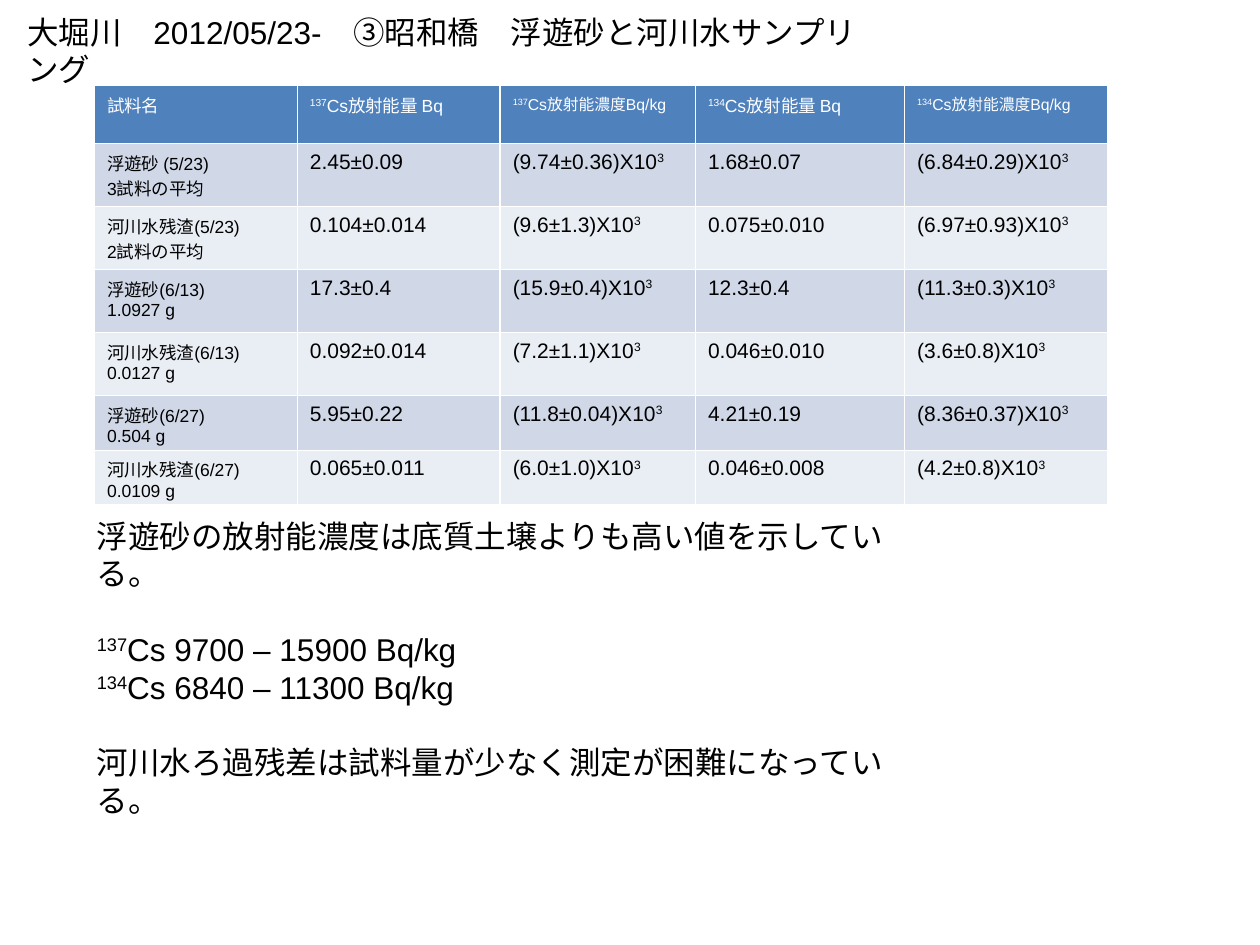
"""Build a slide of radioactive caesium measurements in a river."""
from itertools import chain

from pptx import Presentation
from pptx.dml.color import RGBColor
from pptx.util import Inches, Pt

BLACK = RGBColor(0x00, 0x00, 0x00)
WHITE = RGBColor(0xFF, 0xFF, 0xFF)
HEADER_BLUE = RGBColor(0x4F, 0x81, 0xBD)
BANDS = (RGBColor(0xD0, 0xD8, 0xE8), RGBColor(0xE9, 0xED, 0xF4))

FONT = "Arial"
SLIDE_WIDTH = Inches(10)
SLIDE_HEIGHT = Inches(7.5)
COLUMN_SHARES = (16.1, 16.1, 15.5, 16.6, 16.1)
ROW_SHARES = (6.13, 6.67, 6.67, 6.67, 6.67, 5.73, 5.73)

TITLE = "大堀川　2012/05/23-　③昭和橋　浮遊砂と河川水サンプリング"
FINDINGS = (
    ("浮遊砂の放射能濃度は底質土壌よりも高い値を示している。", 0),
    ("^137^Cs 9700 – 15900 Bq/kg", 21.5),
    ("^134^Cs 6840 – 11300 Bq/kg", 0),
    ("河川水ろ過残差は試料量が少なく測定が困難になっている。", 21.5),
)
HEADER = (
    ("試料名", 10),
    ("^137^Cs放射能量 Bq", 10),
    ("^137^Cs放射能濃度Bq/kg", 9),
    ("^134^Cs放射能量 Bq", 10),
    ("^134^Cs放射能濃度Bq/kg", 9),
)
SAMPLES = (
    (("浮遊砂 (5/23)", "3試料の平均"), "2.45±0.09", "9.74±0.36", "1.68±0.07", "6.84±0.29"),
    (("河川水残渣(5/23)", "2試料の平均"), "0.104±0.014", "9.6±1.3", "0.075±0.010", "6.97±0.93"),
    (("浮遊砂(6/13)", "1.0927 g"), "17.3±0.4", "15.9±0.4", "12.3±0.4", "11.3±0.3"),
    (("河川水残渣(6/13)", "0.0127 g"), "0.092±0.014", "7.2±1.1", "0.046±0.010", "3.6±0.8"),
    (("浮遊砂(6/27)", "0.504 g"), "5.95±0.22", "11.8±0.04", "4.21±0.19", "8.36±0.37"),
    (("河川水残渣(6/27)", "0.0109 g"), "0.065±0.011", "6.0±1.0", "0.046±0.008", "4.2±0.8"),
)


def across(percent):
    """Return a percentage of the slide width."""
    return round(SLIDE_WIDTH * percent / 100)


def down(percent):
    """Return a percentage of the slide height."""
    return round(SLIDE_HEIGHT * percent / 100)


def write_paragraph(paragraph, text, size, color):
    """Write text in which carets enclose superscripts."""
    for index, part in enumerate(text.split("^")):
        if not part:
            continue
        run = paragraph.add_run()
        run.text = part
        run.font.name = FONT
        run.font.size = Pt(size)
        run.font.bold = False
        run.font.color.rgb = color
        if index % 2:
            run.font._element.set("baseline", "30000")


def write_lines(text_frame, lines, size, color):
    """Write one paragraph for each line of a text frame."""
    for index, line in enumerate(lines):
        paragraph = text_frame.add_paragraph() if index else text_frame.paragraphs[0]
        write_paragraph(paragraph, line, size, color)


def add_text(slide, left, top, width, height, lines):
    """Add a wrapping text box with the given lines."""
    shape = slide.shapes.add_textbox(across(left), down(top), across(width), down(height))
    shape.text_frame.word_wrap = True
    write_lines(shape.text_frame, lines, 18, BLACK)
    return shape


def fill_cell(cell, lines, size, color, background):
    """Fill a table cell with colour and text."""
    cell.fill.solid()
    cell.fill.fore_color.rgb = background
    write_lines(cell.text_frame, lines, size, color)


def add_measurements(slide):
    """Add the table of activities and concentrations."""
    shape = slide.shapes.add_table(
        len(ROW_SHARES), len(COLUMN_SHARES), across(7.5), down(9.07),
        across(sum(COLUMN_SHARES)), down(sum(ROW_SHARES)))
    table = shape.table
    for column, share in zip(table.columns, COLUMN_SHARES):
        column.width = across(share)
    for row, share in zip(table.rows, ROW_SHARES):
        row.height = down(share)
    for cell, (label, size) in zip(table.rows[0].cells, HEADER):
        fill_cell(cell, [label], size, WHITE, HEADER_BLUE)
    for row_index, (sample, *values) in enumerate(SAMPLES):
        background = BANDS[row_index % 2]
        cells = table.rows[row_index + 1].cells
        pairs = zip(values[::2], values[1::2])
        entries = chain.from_iterable(
            (activity, f"({concentration})X10^3^") for activity, concentration in pairs)
        fill_cell(cells[0], sample, 10, BLACK, background)
        for column_index, entry in enumerate(entries, start=1):
            fill_cell(cells[column_index], [entry], 12, BLACK, background)


def add_findings(slide):
    """Add the conclusions below the table."""
    shape = add_text(slide, 6.7, 54, 66, 25.6, [line for line, _ in FINDINGS])
    for paragraph, (_, gap) in zip(shape.text_frame.paragraphs, FINDINGS):
        if gap:
            paragraph.space_before = Pt(gap)


def main():
    """Build and save the presentation."""
    presentation = Presentation()
    presentation.slide_width = SLIDE_WIDTH
    presentation.slide_height = SLIDE_HEIGHT
    slide = presentation.slides.add_slide(presentation.slide_layouts[6])
    add_text(slide, 1.2, 0.67, 68.6, 5.33, [TITLE])
    add_measurements(slide)
    add_findings(slide)
    presentation.save("out.pptx")


if __name__ == "__main__":
    main()
